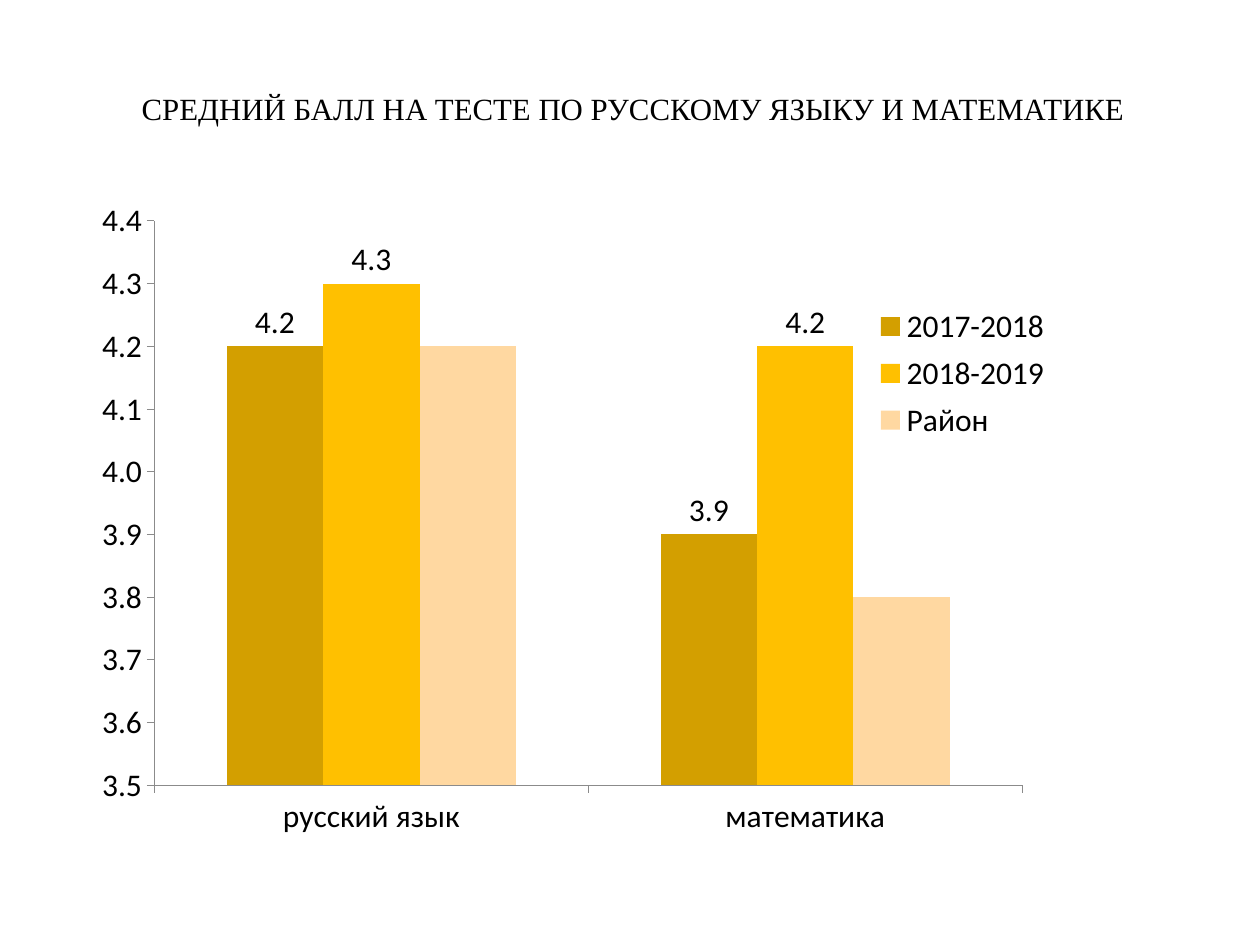
from dataclasses import dataclass

from lxml.etree import SubElement
from pptx import Presentation
from pptx.chart.data import CategoryChartData
from pptx.dml.color import RGBColor
from pptx.enum.chart import XL_CHART_TYPE as ChartType
from pptx.enum.chart import XL_LABEL_POSITION as LabelPosition
from pptx.enum.chart import XL_LEGEND_POSITION as LegendPosition
from pptx.enum.chart import XL_TICK_MARK as TickMark
from pptx.enum.text import MSO_ANCHOR as Anchor
from pptx.enum.text import PP_ALIGN as Align
from pptx.oxml.ns import qn
from pptx.util import Cm, Pt


@dataclass(frozen=True)
class Theme:
    text: RGBColor = RGBColor.from_string("000000")
    axis: RGBColor = RGBColor.from_string("8B8B8B")
    last_year: RGBColor = RGBColor.from_string("D39F00")
    this_year: RGBColor = RGBColor.from_string("FFC000")
    district: RGBColor = RGBColor.from_string("FFD8A1")
    title_font: str = "Times New Roman"
    chart_font: str = "Calibri"
    title_size: Pt = Pt(17.6)
    chart_size: Pt = Pt(18)
    axis_width: Pt = Pt(0.5)


theme = Theme()


def write_text(frame, text, *, font, size, color, align, line_spacing):
    paragraph = frame.paragraphs[0]
    paragraph.alignment = align
    paragraph.line_spacing = line_spacing
    run = paragraph.add_run()
    run.text = text
    run.font.name = font
    run.font.size = size
    run.font.color.rgb = color


def set_layout(parent, index, settings):
    for old_layout in parent.findall(qn("c:layout")):
        parent.remove(old_layout)
    layout = SubElement(parent, qn("c:layout"))
    manual = SubElement(layout, qn("c:manualLayout"))
    for tag, value in settings.items():
        SubElement(manual, qn(f"c:{tag}")).set("val", str(value))
    parent.insert(index, layout)


presentation = Presentation()
presentation.slide_width = Cm(25.4)
presentation.slide_height = Cm(19.05)
slide = presentation.slides.add_slide(presentation.slide_layouts[5])

title = slide.shapes.title
title.left, title.top, title.width, title.height = Cm(1.88), Cm(0.86), Cm(21.77), Cm(2.72)
title.text_frame.word_wrap = True
title.text_frame.vertical_anchor = Anchor.MIDDLE
write_text(
    title.text_frame,
    "СРЕДНИЙ БАЛЛ НА ТЕСТЕ ПО РУССКОМУ ЯЗЫКУ И МАТЕМАТИКЕ",
    font=theme.title_font,
    size=theme.title_size,
    color=theme.text,
    align=Align.CENTER,
    line_spacing=0.9,
)

series_rows = [
    ("2017-2018", (4.2, 3.9), theme.last_year, True),
    ("2018-2019", (4.3, 4.2), theme.this_year, True),
    ("Район", (4.2, 3.8), theme.district, False),
]
chart_data = CategoryChartData(number_format="0.0")
chart_data.categories = ["русский язык", "математика"]
for name, values, color, labelled in series_rows:
    chart_data.add_series(name, values)

chart = slide.shapes.add_chart(
    ChartType.COLUMN_CLUSTERED, Cm(1.8), Cm(4.06), Cm(21.87), Cm(13.08), chart_data
).chart
chart.has_title = False
chart.has_legend = True
chart.legend.position = LegendPosition.RIGHT
chart.legend.include_in_layout = True

plot = chart.plots[0]
plot.gap_width = 150
plot.overlap = 0
plot.vary_by_categories = False

fonts = [chart.font, chart.legend.font]
for axis in (chart.category_axis, chart.value_axis):
    axis.has_major_gridlines = False
    axis.major_tick_mark = TickMark.OUTSIDE
    axis.minor_tick_mark = TickMark.NONE
    axis.format.line.color.rgb = theme.axis
    axis.format.line.width = theme.axis_width
    fonts.append(axis.tick_labels.font)

value_axis = chart.value_axis
value_axis.minimum_scale = 3.5
value_axis.maximum_scale = 4.4
value_axis.major_unit = 0.1
value_axis.tick_labels.number_format = "0.0"
value_axis.tick_labels.number_format_is_linked = False

for series, (name, values, color, labelled) in zip(plot.series, series_rows):
    series.format.fill.solid()
    series.format.fill.fore_color.rgb = color
    series.invert_if_negative = False
    if labelled:
        labels = series.data_labels
        labels.show_value = True
        labels.position = LabelPosition.OUTSIDE_END
        fonts.append(labels.font)

for font in fonts:
    font.name = theme.chart_font
    font.size = theme.chart_size
    font.color.rgb = theme.text

edges = {"xMode": "edge", "yMode": "edge"}
plot_area = chart.element.find(f".//{qn('c:plotArea')}")
set_layout(
    plot_area,
    0,
    {"layoutTarget": "inner", **edges, "x": 0.06, "y": 0.03, "w": 0.8, "h": 0.87},
)
legend = chart.element.find(f".//{qn('c:legend')}")
set_layout(legend, 1, {**edges, "x": 0.72, "y": 0.15, "w": 0.17, "h": 0.23})

presentation.save("out.pptx")
